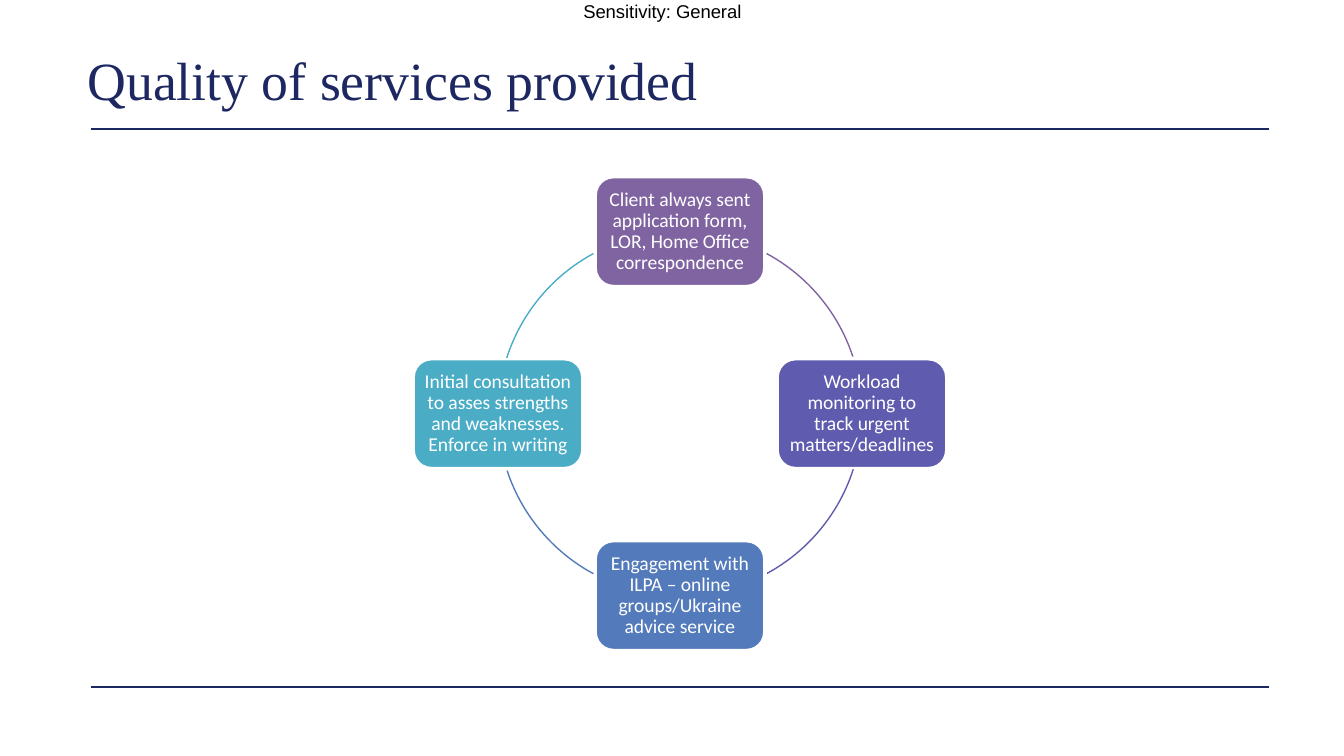
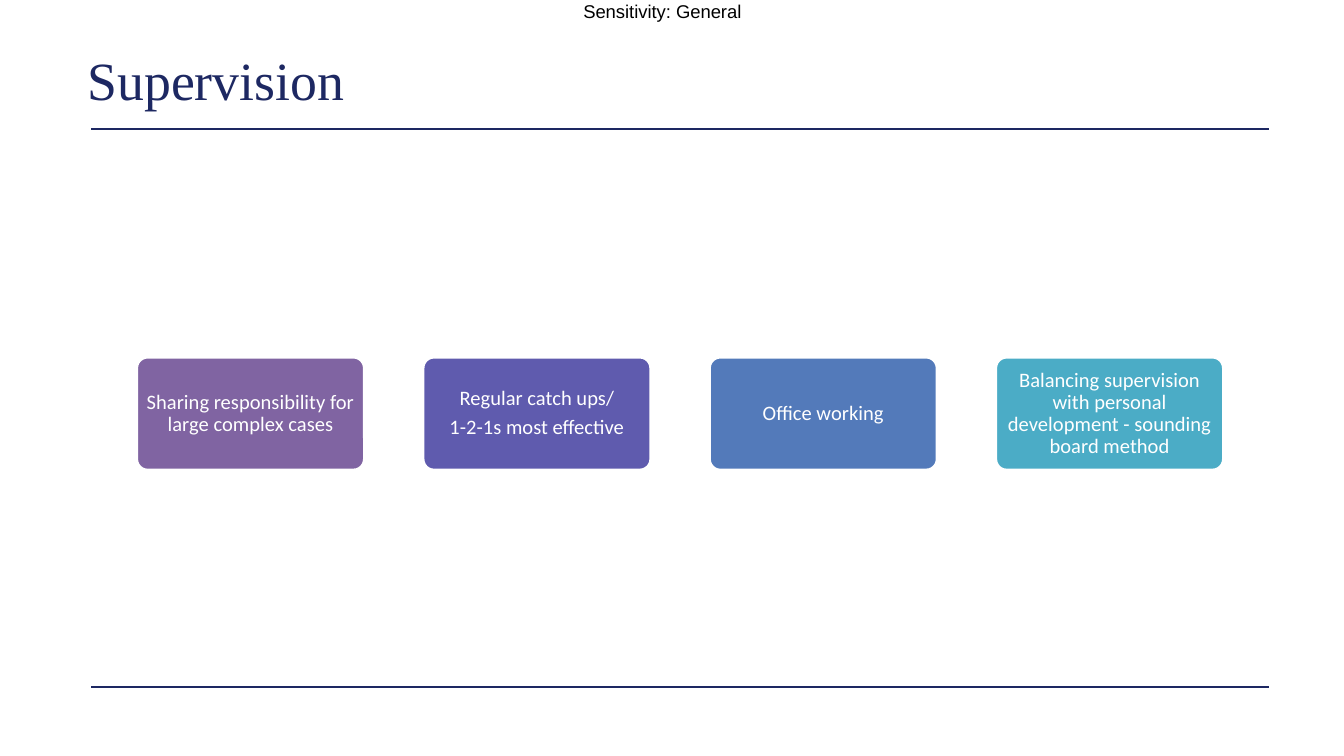
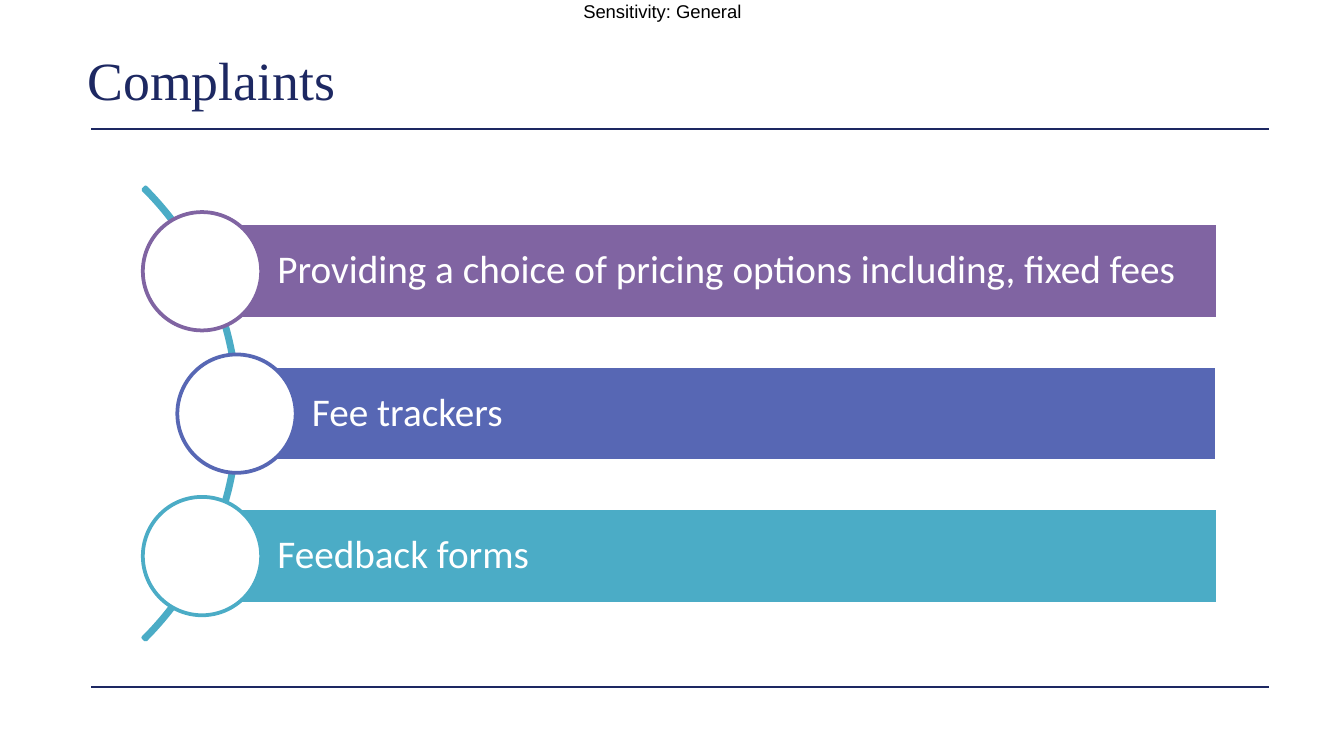
import dataclasses
import typing

import lxml.etree
import pptx
import pptx.dml.color
import pptx.enum.shapes
import pptx.enum.text
import pptx.oxml.ns
import pptx.presentation
import pptx.shapes.autoshape
import pptx.slide
import pptx.text.text
import pptx.util

Pt = pptx.util.Pt
SHAPE = pptx.enum.shapes.MSO_SHAPE
ALIGN = pptx.enum.text.PP_ALIGN
ANCHOR = pptx.enum.text.MSO_ANCHOR


@dataclasses.dataclass(frozen=True)
class Theme:
    navy: str = "1D2862"
    black: str = "000000"
    white: str = "FFFFFF"
    purple: str = "8064A2"
    violet: str = "5F5BAE"
    indigo: str = "5767B4"
    blue: str = "537ABA"
    teal: str = "4BACC6"
    title_font: str = "Times New Roman"
    label_font: str = "Arial"
    body_font: str = "Calibri"
    title_size: float = 28.8
    label_size: float = 9.9
    cycle_size: float = 10.5
    card_size: float = 11
    bar_size: float = 21
    thin: float = 0.75
    thick: float = 2


THEME = Theme()
SLIDE_W, SLIDE_H = 720, 405
MIDDLE_Y = 221.6


class Box(typing.NamedTuple):
    left: float
    top: float
    width: float
    height: float

    def points(self) -> list[pptx.util.Length]:
        return [Pt(v) for v in self]


class Item(typing.NamedTuple):
    text: str
    color: str


CYCLE = (
    Item("Client always sent application form, LOR, Home Office correspondence", THEME.purple),
    Item("Workload monitoring to track urgent matters/deadlines", THEME.violet),
    Item("Engagement with ILPA – online groups/Ukraine advice service", THEME.blue),
    Item("Initial consultation to asses strengths and weaknesses. Enforce in writing", THEME.teal),
)
CARDS = (
    Item("Sharing responsibility for large complex cases", THEME.purple),
    Item("Regular catch ups/\n1-2-1s most effective", THEME.violet),
    Item("Office working", THEME.blue),
    Item("Balancing supervision with personal development - sounding board method", THEME.teal),
)
BARS = (
    Item("Providing a choice of pricing options including, fixed fees", THEME.purple),
    Item("Fee trackers", THEME.indigo),
    Item("Feedback forms", THEME.teal),
)


def rgb(color: str) -> pptx.dml.color.RGBColor:
    return pptx.dml.color.RGBColor.from_string(color)


def centred(x: float, y: float, width: float, height: float) -> Box:
    return Box(x - width / 2, y - height / 2, width, height)


def angle(degrees: float) -> float:
    """Convert clockwise degrees to the scale of shape adjustments."""
    return degrees % 360 * 0.6


def style_text(tf: pptx.text.text.TextFrame, font: str, size: float, color: str) -> None:
    for p in tf.paragraphs:
        for r in p.runs:
            r.font.name = font
            r.font.size = Pt(size)
            r.font.color.rgb = rgb(color)


def set_insets(tf: pptx.text.text.TextFrame, inset: float, left: float | None = None) -> None:
    tf.margin_left = Pt(inset if left is None else left)
    tf.margin_top = tf.margin_right = tf.margin_bottom = Pt(inset)


def add_shape(slide: pptx.slide.Slide, kind: SHAPE, box: Box, fill: str | None, line: str,
              width: float = THEME.thick,
              adjustments: tuple[float, ...] = ()) -> pptx.shapes.autoshape.Shape:
    sp = slide.shapes.add_shape(kind, *box.points())
    sp.shadow.inherit = False
    if fill is None:
        sp.fill.background()
    else:
        sp.fill.solid()
        sp.fill.fore_color.rgb = rgb(fill)
    sp.line.color.rgb = rgb(line)
    sp.line.width = Pt(width)
    for i, value in enumerate(adjustments):
        sp.adjustments[i] = value
    return sp


def write_label(sp: pptx.shapes.autoshape.Shape, text: str, size: float, align: ALIGN,
                inset: float, left: float | None = None) -> None:
    tf = sp.text_frame
    tf.text = text
    tf.word_wrap = True
    tf.vertical_anchor = ANCHOR.MIDDLE
    set_insets(tf, inset, left)
    for p in tf.paragraphs:
        p.alignment = align
        p.line_spacing = 0.9
        p.space_after = Pt(0.35 * size)
    style_text(tf, THEME.body_font, size, THEME.white)


def add_rule(slide: pptx.slide.Slide, y: float) -> None:
    line = slide.shapes.add_connector(
        pptx.enum.shapes.MSO_CONNECTOR.STRAIGHT, Pt(49), Pt(y), Pt(680), Pt(y))
    line.line.color.rgb = rgb(THEME.navy)
    line.line.width = Pt(THEME.thin)
    lxml.etree.SubElement(line._element.spPr, pptx.oxml.ns.qn("a:effectLst"))


def add_slide(prs: pptx.presentation.Presentation, title: str) -> pptx.slide.Slide:
    """Add a slide with the shared rules, sensitivity label and title."""
    slide = prs.slides.add_slide(prs.slide_layouts[5])
    for y in (368, 69.1):
        add_rule(slide, y)

    label = slide.shapes.add_textbox(*Box(312.5, 0, 98, 12).points())
    tf = label.text_frame
    tf.text = "Sensitivity: General"
    tf.word_wrap = True
    set_insets(tf, 0)
    style_text(tf, THEME.label_font, THEME.label_size, THEME.black)

    sp = slide.shapes.title
    sp.left, sp.top, sp.width, sp.height = Box(39.6, 13, 547, 59).points()
    tf = sp.text_frame
    tf.text = title
    tf.auto_size = pptx.enum.text.MSO_AUTO_SIZE.NONE
    tf.vertical_anchor = ANCHOR.MIDDLE
    tf.paragraphs[0].alignment = ALIGN.LEFT
    style_text(tf, THEME.title_font, THEME.title_size, THEME.navy)
    return slide


def add_quality_slide(prs: pptx.presentation.Presentation) -> None:
    slide = add_slide(prs, "Quality of services provided")
    centre_x, radius = 364.3, 97.5
    directions = ((0, -1), (1, 0), (0, 1), (-1, 0))
    clearance = (28.4, 17.8)  # degrees kept free beside top/bottom and side boxes
    ring = centred(centre_x, MIDDLE_Y, 2 * radius, 2 * radius)
    for i, (item, (dx, dy)) in enumerate(zip(CYCLE, directions)):
        box = centred(centre_x + dx * radius, MIDDLE_Y + dy * radius, 91, 59)
        sp = add_shape(slide, SHAPE.ROUNDED_RECTANGLE, box, item.color, THEME.white)
        write_label(sp, item.text, THEME.cycle_size, ALIGN.CENTER, 3)
        start = 90 * (i - 1) + clearance[i % 2]
        end = 90 * i - clearance[(i + 1) % 2]
        add_shape(slide, SHAPE.ARC, ring, None, item.color, THEME.thin,
                  (angle(start), angle(end)))


def add_supervision_slide(prs: pptx.presentation.Presentation) -> None:
    slide = add_slide(prs, "Supervision")
    left, pitch, width, height = 73, 153.4, 122.5, 61
    for i, item in enumerate(CARDS):
        box = Box(left + i * pitch, MIDDLE_Y - height / 2, width, height)
        sp = add_shape(slide, SHAPE.ROUNDED_RECTANGLE, box, item.color, THEME.white,
                       adjustments=(0.1,))
        write_label(sp, item.text, THEME.card_size, ALIGN.CENTER, 1.6)


def add_complaints_slide(prs: pptx.presentation.Presentation) -> None:
    slide = add_slide(prs, "Complaints")
    add_shape(slide, SHAPE.BLOCK_ARC, centred(-43.2, MIDDLE_Y, 342.8, 342.8), None, THEME.teal,
              adjustments=(angle(315), angle(45), 0.005))
    right, height, pitch, diameter = 652.2, 51, 76.3, 63.4
    for i, item in enumerate(BARS):
        left = 126.7 if i == 1 else 108.2
        y = MIDDLE_Y + (i - 1) * pitch
        bar = Box(left, y - height / 2, right - left, height)
        sp = add_shape(slide, SHAPE.RECTANGLE, bar, item.color, THEME.white)
        write_label(sp, item.text, THEME.bar_size, ALIGN.LEFT, 4.2, left=40.4)
        add_shape(slide, SHAPE.OVAL, centred(left, y, diameter, diameter),
                  THEME.white, item.color)


def main() -> None:
    prs = pptx.Presentation()
    prs.slide_width, prs.slide_height = Pt(SLIDE_W), Pt(SLIDE_H)
    add_quality_slide(prs)
    add_supervision_slide(prs)
    add_complaints_slide(prs)
    prs.save("out.pptx")


if __name__ == "__main__":
    main()
